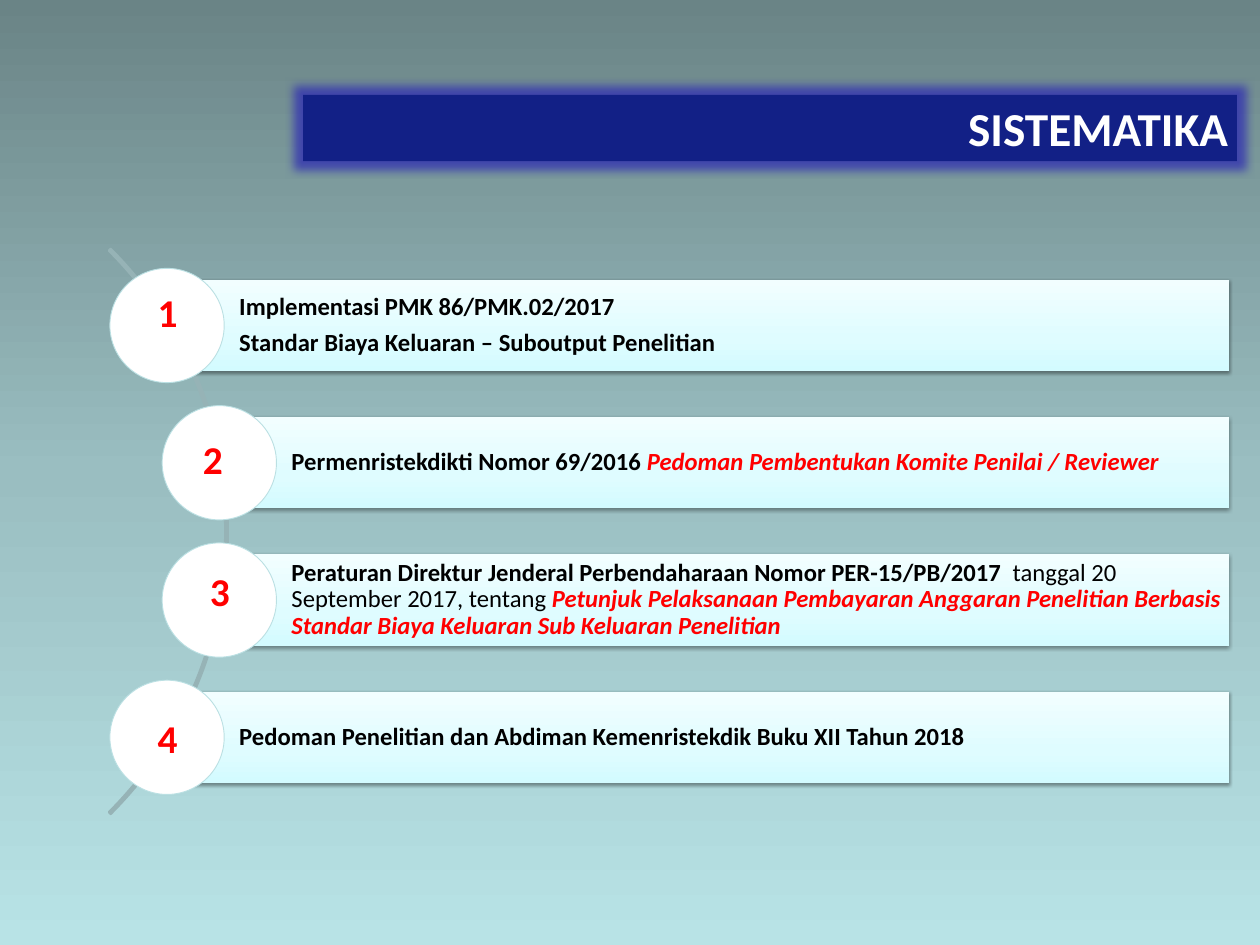
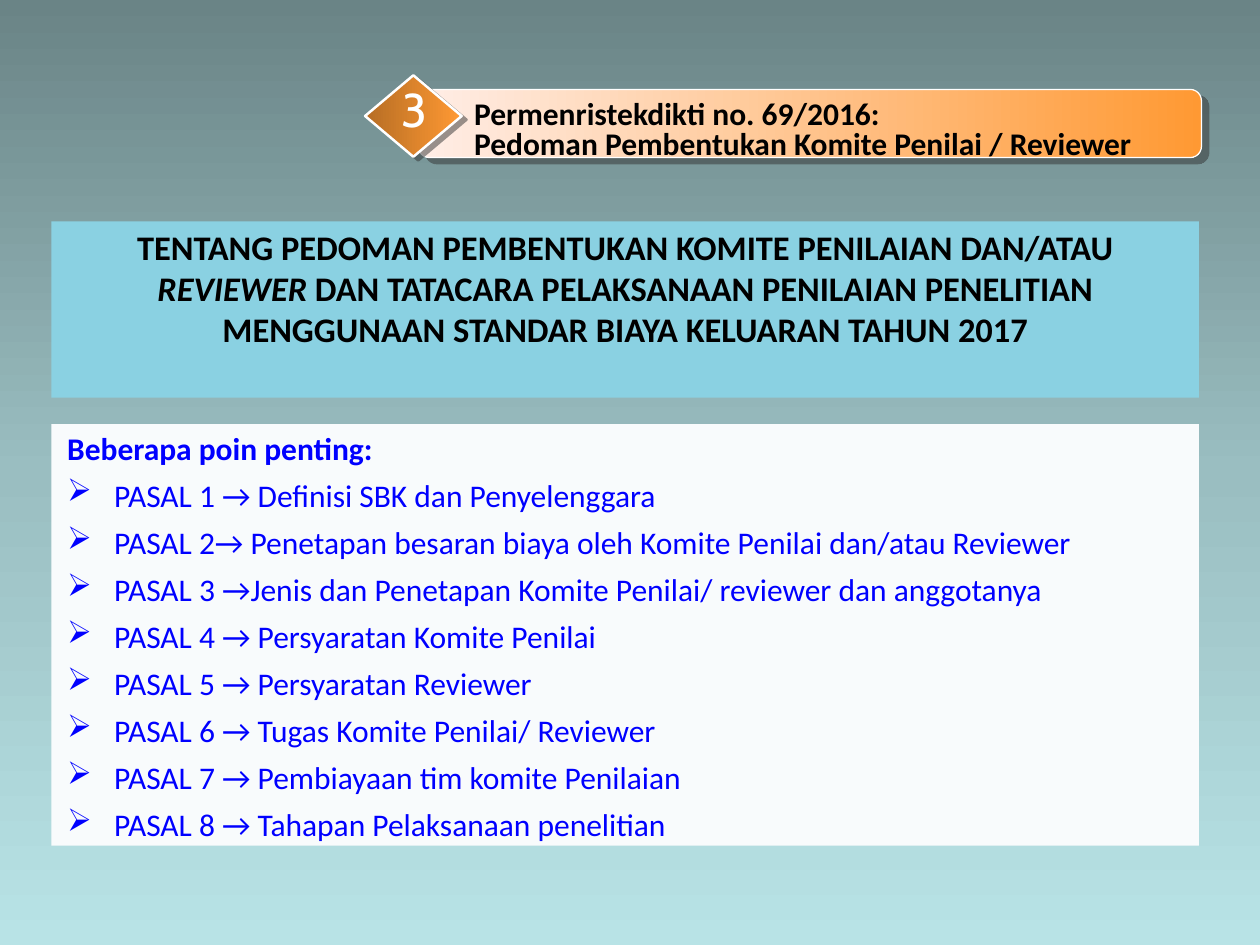
from lxml.etree import SubElement
from pptx import Presentation
from pptx.dml.color import RGBColor
from pptx.enum.shapes import MSO_SHAPE as Preset
from pptx.enum.text import MSO_ANCHOR as Anchor, MSO_AUTO_SIZE as AutoSize, PP_ALIGN as Align
from pptx.oxml.ns import qn
from pptx.util import Inches, Pt

FONT = "Calibri"
BLACK, WHITE, RED, BLUE = "000000", "FFFFFF", "FF0000", "0000FF"
ORANGE, NAVY = "FF9933", "122086"
BACKDROP = [(0, "6A8486"), (50, "9ABEC1"), (100, "B8E3E6")]
BAR_FILL = [(0, "D3FBFF"), (35, "DFFCFF"), (100, "F2FEFF")]
EMPHASIS = dict(color=RED, italic=True)

# Each topic: circle left, numeral position, paragraphs of runs
TOPICS = [
    (1.24, (1.68, 3.21), ["Implementasi PMK 86/PMK.02/2017",
                          "Standar Biaya Keluaran – Suboutput Penelitian"]),
    (1.83, (2.19, 4.86), [["Permenristekdikti Nomor 69/2016 ",
                           ("Pedoman Pembentukan Komite Penilai / Reviewer", EMPHASIS)]]),
    (1.83, (2.27, 6.36), [["Peraturan Direktur Jenderal Perbendaharaan Nomor PER-15/PB/2017",
                           ("  tanggal 20 September 2017, tentang ", dict(bold=False)),
                           ("Petunjuk Pelaksanaan Pembayaran Anggaran Penelitian Berbasis "
                            "Standar Biaya Keluaran Sub Keluaran Penelitian", EMPHASIS)]]),
    (1.24, (1.68, 8.01), ["Pedoman Penelitian dan Abdiman Kemenristekdik Buku XII Tahun 2018"]),
]
ARTICLES = [
    "PASAL 1 → Definisi SBK dan Penyelenggara",
    "PASAL 2→ Penetapan besaran biaya oleh Komite Penilai dan/atau Reviewer",
    "PASAL 3 →Jenis dan Penetapan Komite Penilai/ reviewer dan anggotanya",
    "PASAL 4 → Persyaratan Komite Penilai",
    "PASAL 5 → Persyaratan Reviewer",
    "PASAL 6 → Tugas Komite Penilai/ Reviewer",
    "PASAL 7 → Pembiayaan tim komite Penilaian",
    "PASAL 8 → Tahapan Pelaksanaan penelitian",
]


def rgb(color):
    return RGBColor.from_string(color)


def add_color(parent, color, alpha=100):
    node = SubElement(parent, qn("a:srgbClr"), val=color)
    if alpha < 100:
        SubElement(node, qn("a:alpha"), val=str(alpha * 1000))


def set_gradient(fill, element, stops, angle):
    """Fill with (percent, colour) stops; angle runs clockwise from left to right."""
    fill.gradient()
    gradient = element.find(".//" + qn("a:gradFill"))
    stop_list = gradient.find(qn("a:gsLst"))
    for stop in list(stop_list):
        stop_list.remove(stop)
    for percent, color in stops:
        add_color(SubElement(stop_list, qn("a:gs"), pos=str(percent * 1000)), color)
    gradient.find(qn("a:lin")).set("ang", str(angle * 60000))


def add_effect(shape, kind, color, alpha, **attributes):
    effects = shape._element.spPr.find(qn("a:effectLst"))
    values = {name: str(int(value)) for name, value in attributes.items()}
    add_color(SubElement(effects, qn("a:" + kind), **values), color, alpha)


def add_drop_shadow(shape, color, alpha, blur, distance, angle):
    add_effect(shape, "outerShdw", color, alpha, blurRad=Pt(blur), dist=Pt(distance),
               dir=angle * 60000, rotWithShape=0)


def place(shape, left, top, width, height):
    shape.left, shape.top = Inches(left), Inches(top)
    shape.width, shape.height = Inches(width), Inches(height)


def add_preset(slide, preset, box, fill=None, angle=0, line=None, line_width=1):
    """Add a shape; fill is a colour, a list of gradient stops or None."""
    shape = slide.shapes.add_shape(preset, *map(Inches, box))
    shape.shadow.inherit = False
    if fill is None:
        shape.fill.background()
    elif isinstance(fill, str):
        shape.fill.solid()
        shape.fill.fore_color.rgb = rgb(fill)
    else:
        set_gradient(shape.fill, shape._element.spPr, fill, angle)
    if line:
        shape.line.color.rgb = rgb(line)
        shape.line.width = Pt(line_width)
    else:
        shape.line.fill.background()
    return shape


def write(shape, paragraphs, size, color=BLACK, bold=False, font=FONT, align=Align.LEFT,
          anchor=Anchor.TOP, wrap=True, margins=(0.1, 0.05, 0.1, 0.05), line_spacing=1.0,
          before=0, after=0, indent=0, bullet=None, bullet_indent=0):
    """Write paragraphs (a string, or a list of strings and (text, format) runs).

    With a bullet, every paragraph but the first is a bulleted item in regular weight.
    """
    frame = shape.text_frame
    frame.auto_size, frame.word_wrap = AutoSize.NONE, wrap
    frame.vertical_anchor = anchor
    (frame.margin_left, frame.margin_top,
     frame.margin_right, frame.margin_bottom) = map(Inches, margins)
    for index, runs in enumerate(paragraphs):
        paragraph = frame.add_paragraph() if index else frame.paragraphs[0]
        paragraph.alignment, paragraph.line_spacing = align, line_spacing
        paragraph.space_before = Pt(before if index else 0)
        paragraph.space_after = Pt(after)
        bulleted = bool(bullet and index)
        properties = paragraph._p.get_or_add_pPr()
        properties.set("marL", str(Inches(bullet_indent if bulleted else indent)))
        if bulleted:
            properties.set("indent", str(Inches(indent - bullet_indent)))
            SubElement(properties, qn("a:buChar"), char=bullet)
        for piece in [runs] if isinstance(runs, str) else runs:
            text, changes = (piece, {}) if isinstance(piece, str) else piece
            run = paragraph.add_run()
            run.text = text
            run.font.name, run.font.size = font, Pt(size)
            run.font.bold = changes.get("bold", bold and not bulleted)
            run.font.italic = changes.get("italic", False)
            run.font.color.rgb = rgb(changes.get("color", color))


def add_numeral(slide, numeral, left, top, height, **style):
    box = slide.shapes.add_textbox(*map(Inches, (left, top, 0.45, height)))
    write(box, [numeral], wrap=False, **style)


def add_topic(slide, number, circle_left, numeral_at, paragraphs):
    circle_top = 3.03 + 1.55 * (number - 1)
    bar_left = circle_left + 0.64
    bar = add_preset(slide, Preset.RECTANGLE,
                     (bar_left, circle_top + 0.13, 13.87 - bar_left, 1.03), BAR_FILL, 270)
    add_drop_shadow(bar, BLACK, 38, 3.1, 1.6, 90)
    write(bar, paragraphs, size=20, bold=True, anchor=Anchor.MIDDLE, line_spacing=0.9,
          after=7, margins=(0.82, 0.06, 0.06, 0.06))
    add_preset(slide, Preset.OVAL, (circle_left, circle_top, 1.29, 1.29), WHITE,
               line="BBE0E3", line_width=0.75)
    add_numeral(slide, str(number), *numeral_at, 0.64, size=32, color=RED, bold=True)


def build_outline(slide):
    title = slide.shapes.title
    place(title, 3.42, 1.07, 10.54, 0.75)
    title.fill.solid()
    title.fill.fore_color.rgb = rgb(NAVY)
    title.shadow.inherit = False
    add_effect(title, "glow", "3333B0", 80, rad=Inches(0.2))
    write(title, ["SISTEMATIKA"], size=38.4, color=WHITE, bold=True, align=Align.RIGHT)

    arc = add_preset(slide, Preset.BLOCK_ARC, (-6.45, 1.49, 9.02, 9.02),
                     line="96B3B6", line_width=2)
    for index, value in enumerate((189, 27, 0.003)):
        arc.adjustments[index] = value
    for number, topic in enumerate(TOPICS, 1):
        add_topic(slide, number, *topic)


def build_regulation(slide):
    banner = add_preset(slide, Preset.ROUNDED_RECTANGLE, (4.72, 1.01, 8.84, 0.77),
                        [(0, "FFEEE7"), (100, ORANGE)], line=WHITE)
    add_drop_shadow(banner, "333333", 50, 0, 7.8, 40)
    badge = add_preset(slide, Preset.DIAMOND, (4.12, 0.85, 1.09, 0.92),
                       [(0, "B66D24"), (100, ORANGE)], line=WHITE, line_width=2)
    add_drop_shadow(badge, "333333", 50, 0, 5, 37)

    title = slide.shapes.title
    place(title, 5.06, 1.09, 8.66, 1.11)
    write(title, ["Permenristekdikti no. 69/2016:",
                  "Pedoman Pembentukan Komite Penilai / Reviewer"],
          size=25.6, bold=True, line_spacing=0.8, indent=0.19)
    slide.shapes._spTree.append(title._element)  # bring in front of the banner
    add_numeral(slide, "3", 4.43, 0.86, 0.75, size=38.4, color=WHITE, font="Cabin")

    subject = add_preset(slide, Preset.RECTANGLE, (0.58, 2.5, 12.95, 1.99), "8AD1E2")
    write(subject, [["TENTANG PEDOMAN PEMBENTUKAN KOMITE PENILAIAN DAN/ATAU ",
                     ("REVIEWER", dict(italic=True)),
                     " DAN TATACARA PELAKSANAAN PENILAIAN PENELITIAN "
                     "MENGGUNAAN STANDAR BIAYA KELUARAN TAHUN 2017"]],
          size=28, bold=True, align=Align.CENTER)
    points = add_preset(slide, Preset.RECTANGLE, (0.58, 4.79, 12.95, 4.76), "F8FBFC")
    write(points, ["Beberapa poin penting:", *ARTICLES], size=25.6, color=BLUE, bold=True,
          before=3.2, after=4.3, indent=0.08, bullet="➢", bullet_indent=0.61)


def main():
    deck = Presentation()
    deck.slide_width, deck.slide_height = Inches(14.22), Inches(10.67)
    master = deck.slide_master
    set_gradient(master.background.fill, master._element, BACKDROP, 90)
    title_only = deck.slide_layouts.get_by_name("Title Only")
    for build in (build_outline, build_regulation):
        build(deck.slides.add_slide(title_only))
    deck.save("out.pptx")


if __name__ == "__main__":
    main()
